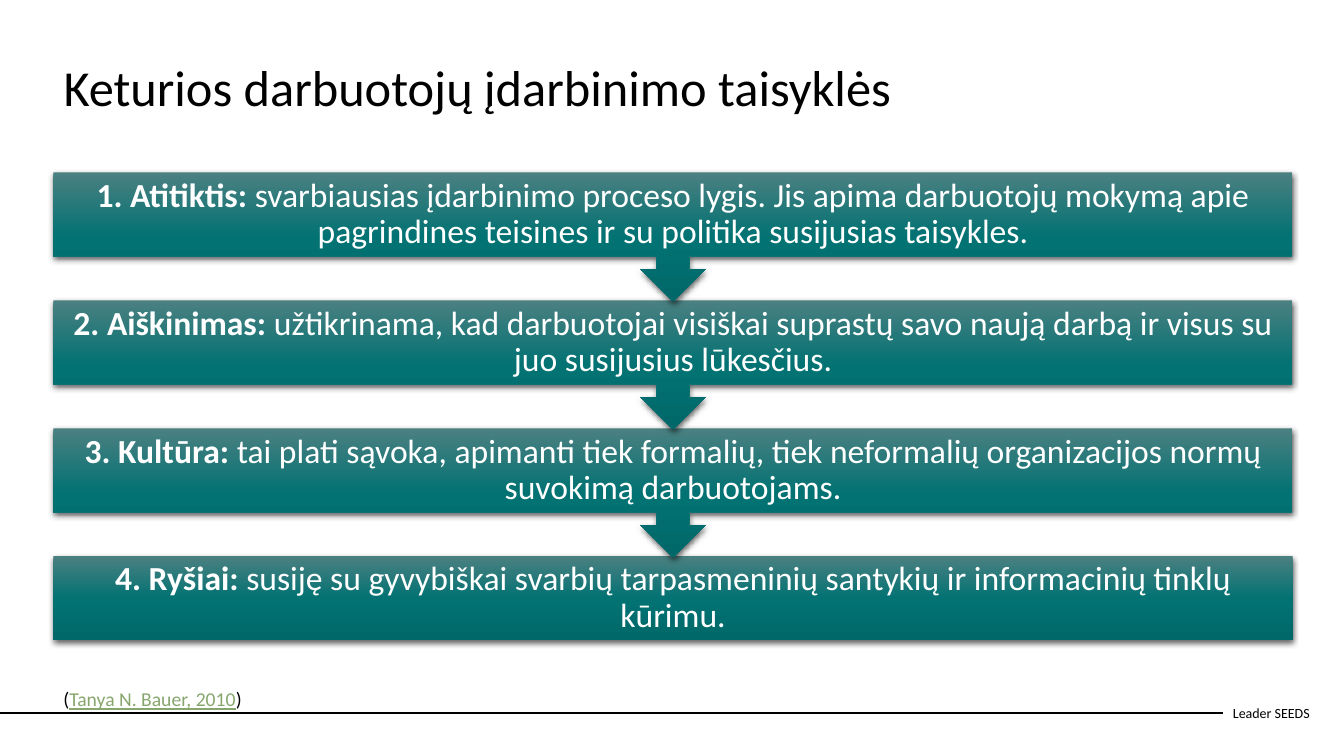
from dataclasses import dataclass

from pptx import Presentation
from pptx.dml.color import RGBColor
from pptx.enum.shapes import MSO_CONNECTOR as Link, MSO_SHAPE as Kind
from pptx.enum.text import MSO_ANCHOR as Anchor, MSO_AUTO_SIZE as Fit, PP_ALIGN as Align
from pptx.oxml import parse_xml
from pptx.oxml.ns import nsdecls
from pptx.shapes.autoshape import Shape
from pptx.slide import Slide
from pptx.text.text import _Paragraph as Para
from pptx.util import Inches, Pt

LEFT, TOP, WIDTH = 0.53, 1.71, 12.29
STEP, TALL, LAST = 1.27, 1.28, 0.83
STOPS = ((0, "4B8081"), (50, "037273"), (100, "006869"))


@dataclass
class Rule:
    name: str
    text: str


@dataclass
class Note:
    left: float
    top: float
    width: float
    height: float
    size: int
    words: tuple[str, ...]
    anchor: Anchor = Anchor.TOP


RULES = (
    Rule("1. Atitiktis: ", "svarbiausias įdarbinimo proceso lygis. Jis apima darbuotojų mokymą "
         "apie pagrindines teisines ir su politika susijusias taisykles."),
    Rule("2. Aiškinimas: ", "užtikrinama, kad darbuotojai visiškai suprastų savo naują darbą "
         "ir visus su juo susijusius lūkesčius."),
    Rule("3. Kultūra: ", "tai plati sąvoka, apimanti tiek formalių, tiek neformalių "
         "organizacijos normų suvokimą darbuotojams."),
    Rule("4. Ryšiai: ", "susiję su gyvybiškai svarbių tarpasmeninių santykių ir "
         "informacinių tinklų kūrimu."),
)
CITE = Note(LEFT, 6.77, 6.67, 0.34, 14, ("(", "Tanya N. Bauer, 2010", ")"))
BRAND = Note(12.13, 6.87, 1.01, 0.4, 10, ("Leader SEEDS",), Anchor.MIDDLE)


def tint(code: str) -> RGBColor:
    """Turn a hex string into a colour."""
    return RGBColor.from_string(code)


def write(para: Para, words: tuple[str, ...], size: int, code: str) -> None:
    """Fill a paragraph with runs of one font, size and colour."""
    for word in words:
        run = para.add_run()
        run.text = word
        run.font.name = "Calibri"
        run.font.size = Pt(size)
        run.font.color.rgb = tint(code)


def shade(box: Shape) -> None:
    """Give a shape the teal gradient and a soft shadow below."""
    box.line.fill.background()
    stops = "".join(f'<a:gs pos="{pos * 1000}"><a:srgbClr val="{code}"/></a:gs>'
                    for pos, code in STOPS)
    props = box._element.spPr
    props.ln.addprevious(parse_xml(
        f'<a:gradFill {nsdecls("a")} rotWithShape="1"><a:gsLst>{stops}</a:gsLst>'
        '<a:lin ang="5400000" scaled="0"/></a:gradFill>'))
    props.append(parse_xml(
        f'<a:effectLst {nsdecls("a")}><a:outerShdw blurRad="{Pt(4.5)}" dist="{Pt(1.5)}" '
        'dir="5400000" algn="ctr" rotWithShape="0"><a:srgbClr val="000000">'
        '<a:alpha val="63000"/></a:srgbClr></a:outerShdw></a:effectLst>'))


def draw_rule(slide: Slide, rule: Rule, row: int) -> None:
    """Draw one rule, with an arrow to the next unless it is the last."""
    last = row == len(RULES) - 1
    kind = Kind.RECTANGLE if last else Kind.DOWN_ARROW_CALLOUT
    box = slide.shapes.add_shape(kind, Inches(LEFT), Inches(TOP + row * STEP),
                                 Inches(WIDTH), Inches(LAST if last else TALL))
    shade(box)
    frame = box.text_frame
    frame.word_wrap = True
    frame.vertical_anchor = Anchor.MIDDLE
    frame.margin_left = frame.margin_right = Inches(0.19)
    frame.margin_top = frame.margin_bottom = 0
    para = frame.paragraphs[0]
    para.alignment = Align.CENTER
    para.line_spacing = 0.9
    write(para, (rule.name, rule.text), 24, "FFFFFF")
    para.runs[0].font.bold = True


def draw_note(slide: Slide, note: Note) -> Shape:
    """Draw a small text box."""
    box = slide.shapes.add_textbox(Inches(note.left), Inches(note.top),
                                   Inches(note.width), Inches(note.height))
    frame = box.text_frame
    frame.word_wrap = True
    frame.vertical_anchor = note.anchor
    write(frame.paragraphs[0], note.words, note.size, "000000")
    return box


def draw_title(slide: Slide) -> None:
    """Place and format the title."""
    title = slide.shapes.title
    title.left, title.top = Inches(LEFT), Inches(0.57)
    title.width, title.height = Inches(11.59), Inches(0.88)
    frame = title.text_frame
    frame.auto_size = Fit.NONE
    frame.vertical_anchor = Anchor.TOP
    para = frame.paragraphs[0]
    para.alignment = Align.LEFT
    para.line_spacing = 0.9
    write(para, ("Keturios darbuotojų įdarbinimo taisyklės",), 36, "000000")


def draw_foot(slide: Slide) -> None:
    """Draw the footer text and the line that leads to it."""
    brand = draw_note(slide, BRAND)
    line = slide.shapes.add_connector(Link.STRAIGHT, Inches(-0.01), Inches(7.07),
                                      Inches(12.13), Inches(7.07))
    line.end_connect(brand, 1)
    line.line.color.rgb = tint("000000")
    line.line.width = Pt(1.5)
    line._element.spPr.append(parse_xml(f'<a:effectLst {nsdecls("a")}/>'))


def main() -> None:
    """Build and save the slide."""
    deck = Presentation()
    deck.slide_width, deck.slide_height = Inches(13.33), Inches(7.5)
    slide = deck.slides.add_slide(deck.slide_layouts[5])
    draw_foot(slide)
    draw_title(slide)
    for row in reversed(range(len(RULES))):
        draw_rule(slide, RULES[row], row)
    cite = draw_note(slide, CITE)
    font = cite.text_frame.paragraphs[0].runs[1].font
    font.color.rgb = tint("87A66E")
    font.underline = True
    deck.save("out.pptx")


if __name__ == "__main__":
    main()
